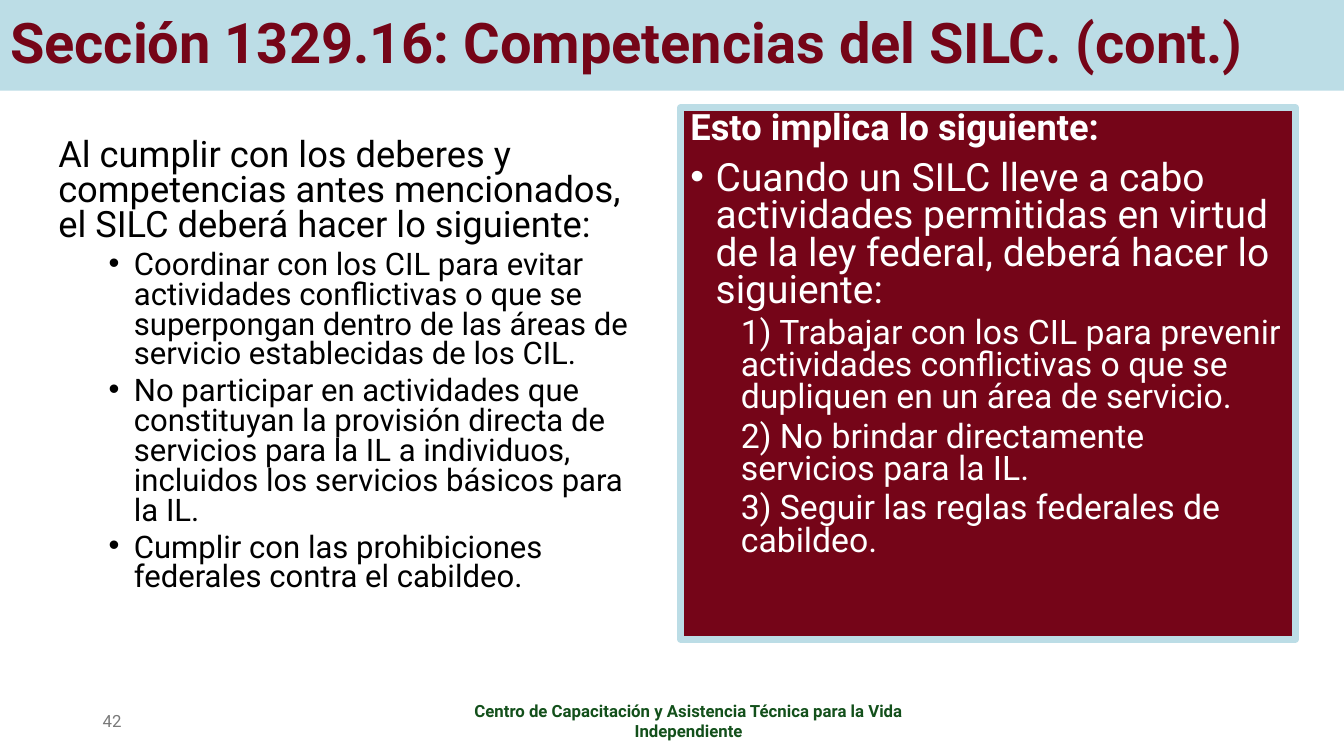
from lxml import etree
from pptx import Presentation
from pptx.dml.color import RGBColor
from pptx.enum.shapes import MSO_SHAPE
from pptx.enum.text import MSO_ANCHOR, MSO_AUTO_SIZE, PP_ALIGN
from pptx.oxml.ns import qn
from pptx.util import Inches, Pt

RECTANGLE = MSO_SHAPE.RECTANGLE
TOP, MIDDLE = MSO_ANCHOR.TOP, MSO_ANCHOR.MIDDLE
LEFT, CENTER = PP_ALIGN.LEFT, PP_ALIGN.CENTER
NO_AUTOFIT = MSO_AUTO_SIZE.NONE
TITLE_ONLY = 5
FONT = "Roboto"
COLORS = {
    "sky": "BCDDE6",
    "maroon": "750518",
    "black": "000000",
    "white": "FFFFFF",
    "gray": "797979",
    "green": "13501B",
}

DUTIES = [
    "Coordinar con los CIL para evitar actividades conflictivas o que se superpongan "
    "dentro de las áreas de servicio establecidas de los CIL.",
    "No participar en actividades que constituyan la provisión directa de servicios "
    "para la IL a individuos, incluidos los servicios básicos para la IL.",
    "Cumplir con las prohibiciones federales contra el cabildeo.",
]
RULES = [
    "1) Trabajar con los CIL para prevenir actividades conflictivas o que se "
    "dupliquen en un área de servicio.",
    "2) No brindar directamente servicios para la IL.",
    "3) Seguir las reglas federales de cabildeo.",
]


def color(name):
    """Return the named palette colour."""
    return RGBColor.from_string(COLORS[name])


def prepare_frame(shape, anchor=TOP):
    """Make the text of a shape wrap at a fixed size and return its frame."""
    frame = shape.text_frame
    frame.auto_size = NO_AUTOFIT
    frame.word_wrap = True
    frame.vertical_anchor = anchor
    return frame


def write(frame, text, size, ink, bold=False, align=LEFT, spacing=1.0, before=0,
          margin=0, hanging=0, level=0):
    """Write one formatted paragraph, bulleted when it has a hanging indent."""
    paragraph = frame.paragraphs[0]
    if paragraph.runs:
        paragraph = frame.add_paragraph()
    paragraph.alignment = align
    paragraph.line_spacing = spacing
    paragraph.space_before = Pt(before)
    paragraph.level = level
    properties = paragraph._p.get_or_add_pPr()
    properties.set("marL", str(Inches(margin)))
    properties.set("indent", str(Inches(-hanging)))
    if hanging:
        bullet_font = etree.SubElement(properties, qn("a:buFont"))
        bullet_font.set("typeface", "Arial")
        etree.SubElement(properties, qn("a:buChar")).set("char", "•")
    else:
        etree.SubElement(properties, qn("a:buNone"))
    run = paragraph.add_run()
    run.text = text
    run.font.name = FONT
    run.font.size = Pt(size)
    run.font.bold = bold
    run.font.color.rgb = color(ink)


def add_title(slide, left, top, width, height):
    """Fill the title band across the top of the slide."""
    title = slide.shapes.title
    title.left, title.top = Inches(left), Inches(top)
    title.width, title.height = Inches(width), Inches(height)
    title.fill.solid()
    title.fill.fore_color.rgb = color("sky")
    write(prepare_frame(title, MIDDLE), "Sección 1329.16: Competencias del SILC. (cont.)",
          40, "maroon", bold=True, spacing=0.9)


def add_duties(slide, left, top, width, height):
    """Place the duties of the SILC as a lead sentence with bullets."""
    duties = slide.shapes.add_textbox(Inches(left), Inches(top), Inches(width), Inches(height))
    frame = prepare_frame(duties)
    write(frame, "Al cumplir con los deberes y competencias antes mencionados, "
          "el SILC deberá hacer lo siguiente:", 25.9, "black", spacing=0.8, before=10)
    for duty in DUTIES:
        write(frame, duty, 22.2, "black", spacing=0.8, before=5,
              margin=0.75, hanging=0.25, level=1)


def add_implications(slide, left, top, width, height):
    """Place the framed panel that explains what the duties imply."""
    panel = slide.shapes.add_shape(RECTANGLE, Inches(left), Inches(top),
                                   Inches(width), Inches(height))
    panel.shadow.inherit = False
    panel.fill.solid()
    panel.fill.fore_color.rgb = color("maroon")
    panel.line.color.rgb = color("sky")
    panel.line.width = Pt(5)
    frame = prepare_frame(panel)
    write(frame, "Esto implica lo siguiente:", 25.9, "white", bold=True,
          spacing=0.8, before=10)
    write(frame, "Cuando un SILC lleve a cabo actividades permitidas en virtud de la "
          "ley federal, deberá hacer lo siguiente:", 27.8, "white",
          spacing=0.8, before=10, margin=0.25, hanging=0.25)
    for rule in RULES:
        write(frame, rule, 24.1, "white", spacing=0.8, before=5, margin=0.5, level=1)


def add_footer(slide, left, top, width, height):
    """Place the page number and the centre's name along the bottom."""
    number = slide.shapes.add_textbox(Inches(left), Inches(top), Inches(3), Inches(height))
    write(prepare_frame(number, MIDDLE), "42", 12, "gray")
    center_name = slide.shapes.add_textbox(Inches(left + 3.5), Inches(top),
                                           Inches(width - 3.5), Inches(height))
    write(prepare_frame(center_name, MIDDLE),
          "Centro de Capacitación y Asistencia Técnica para la Vida Independiente",
          12, "green", bold=True, align=CENTER)


def main():
    """Build the slide and save it."""
    deck = Presentation()
    deck.slide_width, deck.slide_height = Inches(13.33), Inches(7.5)
    slide = deck.slides.add_slide(deck.slide_layouts[TITLE_ONLY])
    add_title(slide, 0, 0, 13.33, 0.9)
    add_duties(slide, 0.48, 1.34, 5.87, 5.01)
    add_implications(slide, 6.75, 1.07, 6.1, 5.27)
    add_footer(slide, 0.92, 6.95, 8.32, 0.4)
    deck.save("out.pptx")


if __name__ == "__main__":
    main()
